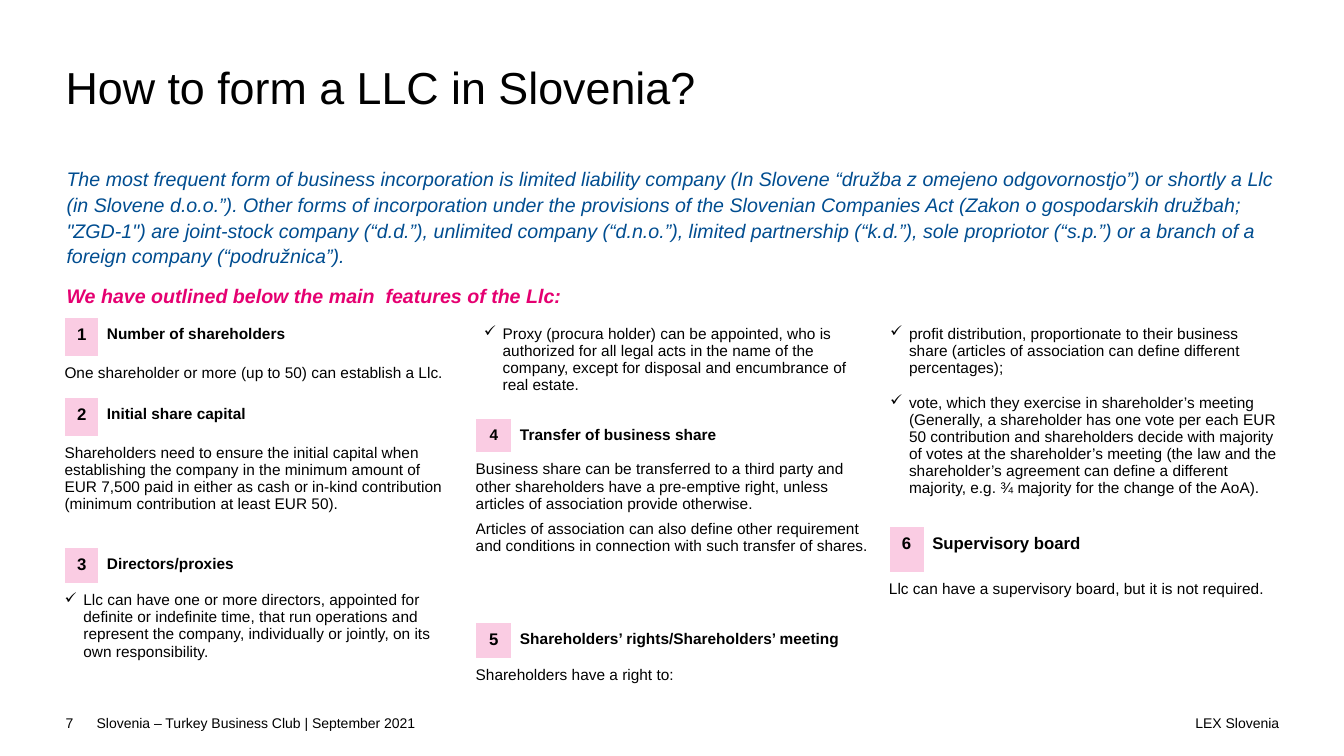
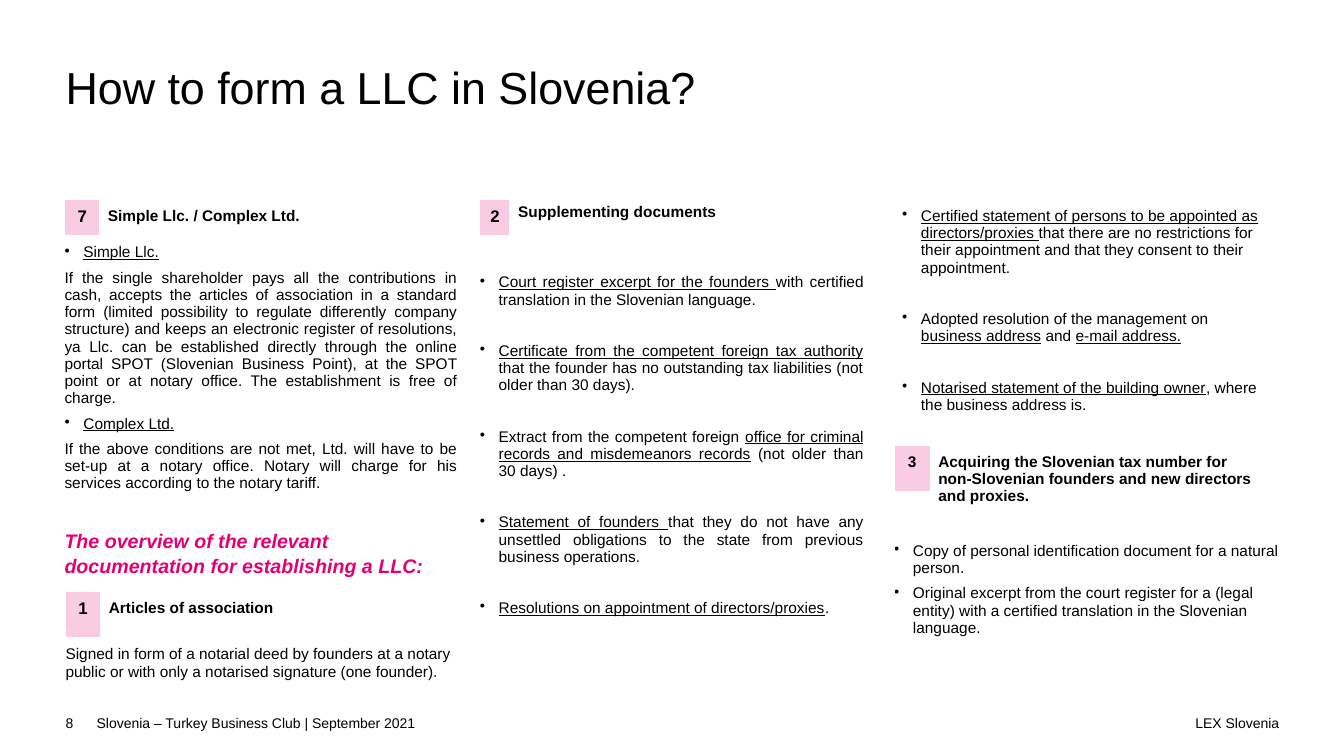
"""Build two slides on forming a limited liability company in Slovenia."""
import pptx
import pptx.util
import pptx.dml.color
import pptx.enum.text
import lxml.etree
from dataclasses import dataclass

Pt = pptx.util.Pt
Align = pptx.enum.text.PP_ALIGN
Anchor = pptx.enum.text.MSO_ANCHOR


@dataclass(frozen=True)
class Theme:
    font: str = "Arial"
    ink: str = "000000"
    paper: str = "FFFFFF"
    badge: str = "FACCE3"
    blue: str = "004D90"
    pink: str = "E50071"
    title_size: int = 32
    lead_size: int = 14
    badge_size: int = 12
    text_size: int = 11
    footer_size: int = 10
    inset: float = 5.76
    indent: float = 13.5


theme = Theme()


def write(frame, lines, size=theme.text_size, color=theme.ink, bold=False, italic=False,
          align=Align.LEFT, before=0, after=0, spacing=1.0):
    """Fill a frame; a leading mark makes a bullet and underscores enclose underlined words."""
    frame.word_wrap = True
    for index, line in enumerate(lines):
        paragraph = frame.paragraphs[0] if index == 0 else frame.add_paragraph()
        paragraph.alignment = align
        paragraph.space_before, paragraph.space_after = Pt(before), Pt(after)
        paragraph.line_spacing = spacing
        if line[:2] in ("• ", "✓ "):
            properties = paragraph._p.get_or_add_pPr()
            properties.set("marL", str(Pt(theme.indent)))
            properties.set("indent", str(-Pt(theme.indent)))
            bullet = lxml.etree.SubElement(properties, pptx.oxml.ns.qn("a:buChar"))
            bullet.set("char", line[0])
            line = line[2:]
        for part, words in enumerate(line.split("_")):
            if words:
                run = paragraph.add_run()
                run.text = words
                if part % 2:
                    run.font.underline = True
        font = paragraph.font
        font.name, font.size, font.bold, font.italic = theme.font, Pt(size), bold, italic
        font.color.rgb = pptx.dml.color.RGBColor.from_string(color)


def add_column(slide, left, top, widths, rows):
    """Add a table of head rows (number, heading), body rows (lines, options) and tail rows."""
    heights = [row[1] for row in rows]
    table = slide.shapes.add_table(len(rows), len(widths), Pt(left), Pt(top),
                                   Pt(sum(widths)), Pt(sum(heights))).table
    table.first_row = table.horz_banding = False
    for column, width in zip(table.columns, widths):
        column.width = Pt(width)
    for cell in table.iter_cells():
        cell.fill.solid()
        cell.fill.fore_color.rgb = pptx.dml.color.RGBColor.from_string(theme.paper)
        cell.margin_left = cell.margin_top = cell.margin_right = cell.margin_bottom = 0
        cell.text_frame.paragraphs[0].font.size = Pt(theme.text_size)
    for index, (kind, height, *content) in enumerate(rows):
        table.rows[index].height = Pt(height)
        first = table.cell(index, 0)
        if kind == "head":
            number, heading = content
            second = table.cell(index, 1)
            first.fill.fore_color.rgb = pptx.dml.color.RGBColor.from_string(theme.badge)
            for cell in (first, second):
                cell.margin_left = cell.margin_right = Pt(theme.inset)
                cell.margin_top = cell.margin_bottom = Pt(theme.inset)
            write(first.text_frame, [number], theme.badge_size, bold=True, align=Align.CENTER)
            write(second.text_frame, heading.splitlines(), bold=True)
        elif kind == "tail":
            table.cell(index - 1, 1).merge(table.cell(index, 1))
        else:
            lines, options = content
            if len(widths) > 1:
                first.merge(table.cell(index, len(widths) - 1))
            side = options.get("side", 0)
            first.margin_left = first.margin_right = Pt(side)
            first.margin_top = Pt(options.get("top", theme.inset))
            write(first.text_frame, lines, align=options.get("align", Align.LEFT),
                  after=options.get("after", 6))
    return table


deck = pptx.Presentation()
deck.slide_width, deck.slide_height = Pt(960), Pt(540)
slides = []
for page in ("7", "8"):
    slide = deck.slides.add_slide(deck.slide_layouts[6])
    slides.append(slide)
    for text, left, top, width, height, size, align, anchor, spacing in (
        ("How to form a LLC in Slovenia?", 46.8, 46.8, 866, 70.6,
         theme.title_size, Align.LEFT, Anchor.TOP, 0.9),
        (page, 46.8, 493.2, 22.3, 46.8, theme.footer_size, Align.LEFT, Anchor.MIDDLE, 1.0),
        ("Slovenia – Turkey Business Club | September 2021", 69.1, 493.2, 311.8, 46.8,
         theme.footer_size, Align.LEFT, Anchor.MIDDLE, 1.0),
        ("LEX Slovenia", 658.8, 493.2, 254.9, 46.8,
         theme.footer_size, Align.RIGHT, Anchor.MIDDLE, 1.0),
    ):
        frame = slide.shapes.add_textbox(Pt(left), Pt(top), Pt(width), Pt(height)).text_frame
        frame.margin_left = frame.margin_top = frame.margin_right = frame.margin_bottom = 0
        frame.vertical_anchor = anchor
        write(frame, [text], size, align=align, spacing=spacing)

features, documents = slides

for slide, left, top, width, height, color, bold, before, text in (
    (features, 47.5, 117.4, 866, 76, theme.blue, False, 0,
     "The most frequent form of business incorporation is limited liability company (In Slovene "
     "“družba z omejeno odgovornostjo”) or shortly a Llc (in Slovene d.o.o.”). Other forms of "
     "incorporation under the provisions of the Slovenian Companies Act (Zakon o gospodarskih "
     "družbah; \"ZGD-1\") are joint-stock company (“d.d.”), unlimited company (“d.n.o.”), limited "
     "partnership (“k.d.”), sole propriotor (“s.p.”) or a branch of a foreign company "
     "(“podružnica”)."),
    (features, 47.5, 201.4, 866, 19, theme.pink, True, 0,
     "We have outlined below the main  features of the Llc:"),
    (documents, 46.1, 375.8, 281.5, 40, theme.pink, True, 0,
     "The overview of the relevant documentation for establishing a LLC:"),
):
    frame = slide.shapes.add_textbox(Pt(left), Pt(top), Pt(width), Pt(height)).text_frame
    frame.margin_left = frame.margin_top = frame.margin_right = frame.margin_bottom = 0
    write(frame, [text], theme.lead_size, color, bold, True, before=before, spacing=1.1)

add_column(features, 46.1, 226.8, (24.5, 171.4, 82.8), (
    ("head", 28.1, "1", "Number of shareholders"),
    ("body", 28.8, ["One shareholder or more (up to 50) can establish a Llc."], {}),
    ("head", 28.1, "2", "Initial share capital"),
    ("body", 79.2, ["Shareholders need to ensure the initial capital when establishing the company "
                    "in the minimum amount of EUR 7,500 paid in either as cash or in-kind "
                    "contribution (minimum contribution at least EUR 50)."], {}),
    ("head", 25.3, "3", "Directors/proxies"),
    ("body", 59, ["✓ Llc can have one or more directors, appointed for definite or indefinite "
                  "time, that run operations and represent the company, individually or jointly, "
                  "on its own responsibility."], {}),
))

transfer = add_column(features, 339.8, 226.8, (25.9, 167, 88.6), (
    ("body", 72, ["✓ Proxy (procura holder) can be appointed, who is authorized for all legal acts "
                  "in the name of the company, except for disposal and encumbrance of real "
                  "estate."], {"side": theme.inset}),
    ("head", 24, "4", "Transfer of business share"),
    ("body", 121, ["Business share can be transferred to a third party and other shareholders have "
                   "a pre-emptive right, unless articles of association provide otherwise.",
                   "Articles of association can also define other requirement and conditions in "
                   "connection with such transfer of shares."], {}),
    ("head", 24, "5", "Shareholders’ rights/Shareholders’ meeting"),
    ("body", 50.4, ["Shareholders have a right to:"], {}),
))
transfer.cell(1, 0).text_frame.paragraphs[0].font.size = Pt(theme.text_size)
transfer.cell(3, 1).merge(transfer.cell(3, 2))

add_column(features, 635.8, 226.8, (277.9,), (
    ("body", 149, ["✓ profit distribution, proportionate to their business share (articles of "
                   "association can define different percentages);",
                   "✓ vote, which they exercise in shareholder’s meeting (Generally, a shareholder "
                   "has one vote per each EUR 50 contribution and shareholders decide with "
                   "majority of votes at the shareholder’s meeting (the law and the shareholder’s "
                   "agreement can define a different majority, e.g. ¾ majority for the change of "
                   "the AoA)."], {"after": 12.3}),
))

board = add_column(features, 635, 375.8, (25.2, 165.6, 87.1), (
    ("head", 33.1, "6", "Supervisory board"),
    ("body", 19, ["Llc can have a supervisory board, but it is not required."], {"after": 0}),
))
board.cell(0, 1).text_frame.paragraphs[0].font.size = Pt(theme.badge_size)

simple = add_column(documents, 46.1, 142.6, (25.2, 167.8, 87.8), (
    ("head", 25.3, "7", "Simple Llc. / Complex Ltd."),
    ("body", 195, ["• _Simple Llc._",
                   "If the single shareholder pays all the contributions in cash, accepts the "
                   "articles of association in a standard form (limited possibility to regulate "
                   "differently company structure) and keeps an electronic register of "
                   "resolutions, ya Llc. can be established directly through the online portal "
                   "SPOT (Slovenian Business Point), at the SPOT point or at notary office. The "
                   "establishment is free of charge.",
                   "• _Complex Ltd._",
                   "If the above conditions are not met, Ltd. will have to be set-up at a notary "
                   "office. Notary will charge for his services according to the notary tariff."],
     {"align": Align.JUSTIFY}),
))

add_column(documents, 46.8, 422.6, (25.2, 167.8, 87.8), (
    ("head", 33.1, "1", "Articles of association"),
    ("body", 41, ["Signed in form of a notarial deed by founders at a notary public or with only "
                  "a notarised signature (one founder)."], {}),
))

add_column(documents, 342.7, 171.4, (274.3,), (
    ("body", 325.4, [
        "• _Court register excerpt for the founders _with certified translation in the Slovenian "
        "language.",
        "• _Certificate from the competent foreign tax authority _that the founder has no "
        "outstanding tax liabilities (not older than 30 days).",
        "• Extract from the competent foreign _office for criminal records and misdemeanors "
        "records_ (not older than 30 days) .",
        "• _Statement of founders _that they do not have any unsettled obligations to the state "
        "from previous business operations.",
        "• _Resolutions on appointment of directors/proxies_."],
     {"align": Align.JUSTIFY, "top": 24.3, "after": 24.5}),
))

add_column(documents, 638.6, 142.6, (25.9, 249.1), (
    ("body", 175.7, [
        "• _Certified statement of persons to be appointed as directors/proxies _that there are "
        "no restrictions for their appointment and that they consent to their appointment.",
        "• Adopted resolution of the management on _business address_ and _e-mail address._",
        "• _Notarised statement of the building owner_, where the business address is."],
     {"side": theme.inset, "after": 24.5}),
    ("head", 33.1, "3", "Acquiring the Slovenian tax number for\n"
                        "non-Slovenian founders and new directors and proxies."),
    ("tail", 36),
    ("body", 110.9, [
        "• Copy of personal identification document for a natural person.",
        "• Original excerpt from the court register for a (legal entity) with a certified "
        "translation in the Slovenian language."], {"top": 0}),
)).cell(1, 0).text_frame.paragraphs[0].font.size = Pt(theme.text_size)

supplements = add_column(documents, 342.7, 142.6, (21.6, 249.8), (
    ("head", 25.3, "2", "Supplementing documents"),
    ("tail", 25.3),
))
supplements.cell(0, 1).margin_top = Pt(2.88)

deck.save("out.pptx")
